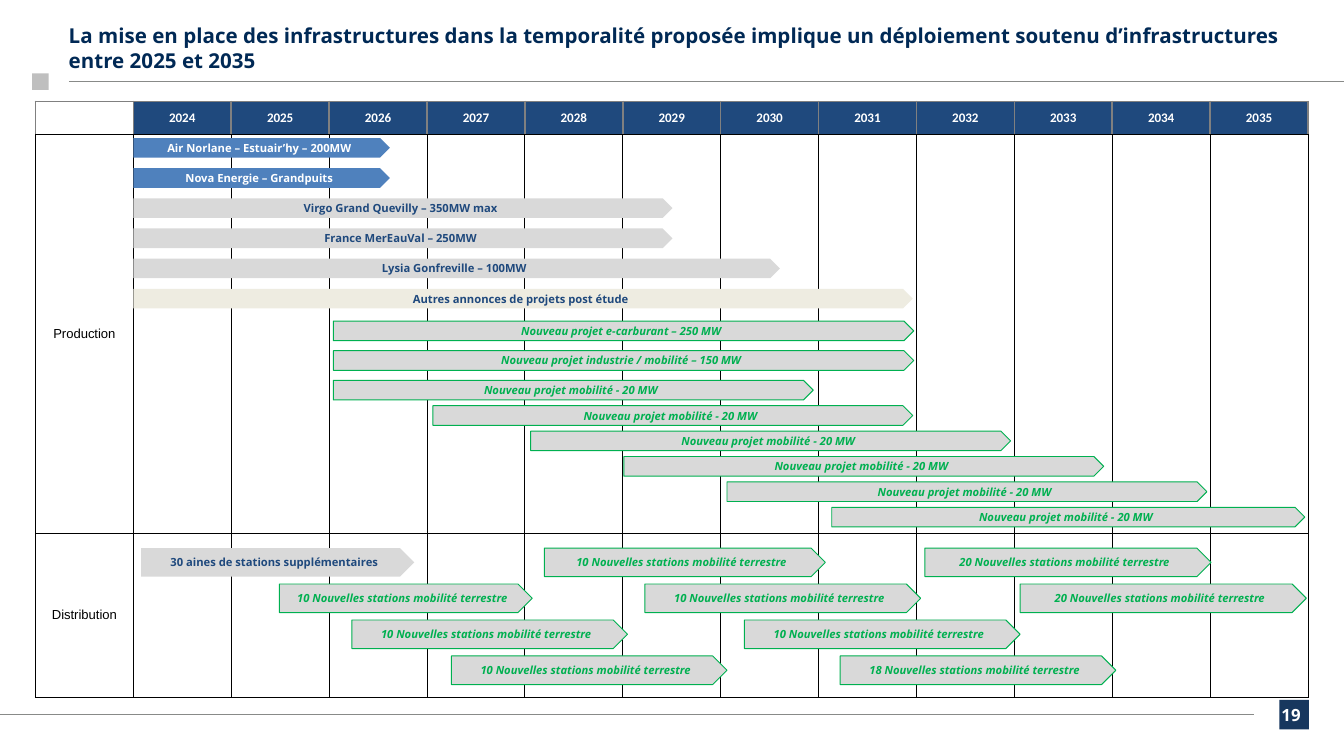
from lxml import etree
from pptx import Presentation
from pptx.dml.color import RGBColor
from pptx.enum.shapes import MSO_CONNECTOR, MSO_SHAPE
from pptx.enum.text import MSO_ANCHOR, PP_ALIGN
from pptx.oxml import parse_xml
from pptx.oxml.ns import nsdecls, qn
from pptx.util import Cm, Pt

STRAIGHT = MSO_CONNECTOR.STRAIGHT
RECT, PENTAGON = MSO_SHAPE.RECTANGLE, MSO_SHAPE.PENTAGON
MIDDLE = MSO_ANCHOR.MIDDLE
LEFT, CENTER = PP_ALIGN.LEFT, PP_ALIGN.CENTER

BLACK = RGBColor(0x00, 0x00, 0x00)
WHITE = RGBColor(0xFF, 0xFF, 0xFF)
NAVY = RGBColor(0x00, 0x29, 0x55)
PAGE_BLUE = RGBColor(0x17, 0x37, 0x5E)
HEADER_BLUE = RGBColor(0x1F, 0x49, 0x7D)
BAR_BLUE = RGBColor(0x4F, 0x81, 0xBD)
BAR_GREY = RGBColor(0xD9, 0xD9, 0xD9)
BAR_BEIGE = RGBColor(0xEE, 0xEC, 0xE1)
GREEN = RGBColor(0x00, 0xB0, 0x50)
MARK_GREY = RGBColor(0xBF, 0xBF, 0xBF)
RULE_GREY = RGBColor(0x88, 0x8A, 0x88)
BORDER_GREY = RGBColor(0x80, 0x80, 0x80)


def write(tf, text, size=6, font="Open Sans", color=BLACK, bold=True,
          italic=False, align=CENTER, margin_y=0):
    tf.word_wrap = True
    tf.vertical_anchor = MIDDLE
    tf.margin_left = tf.margin_right = 0
    tf.margin_top = tf.margin_bottom = Cm(margin_y)
    p = tf.paragraphs[0]
    p.alignment = align
    r = p.add_run()
    r.text = text
    r.font.name, r.font.size = font, Pt(size)
    r.font.bold, r.font.italic = bold, italic
    r.font.color.rgb = color


def add_block(kind, x, y, w, h, fill, line=None):
    s = slide.shapes.add_shape(kind, Cm(x), Cm(y), Cm(w), Cm(h))
    s.shadow.inherit = False
    s.fill.solid()
    s.fill.fore_color.rgb = fill
    if line is None:
        s.line.fill.background()
    else:
        s.line.color.rgb = line
        s.line.width = Pt(0.5)
    return s


prs = Presentation()
prs.slide_width, prs.slide_height = Cm(25.4), Cm(14.29)
slide = prs.slides.add_slide(prs.slide_layouts[6])

# Frame: rules, markers, title and page number
for x1, x2, y in [(0, 23.7, 13.5), (1.3, 25.4, 1.54)]:
    line = slide.shapes.add_connector(STRAIGHT, Cm(x1), Cm(y), Cm(x2), Cm(y))
    line.line.color.rgb = RULE_GREY
    line.line.width = Pt(0.75)
    etree.SubElement(line._element.spPr, qn("a:effectLst"))

add_block(RECT, 24.18, 13.23, 0.56, 0.56, PAGE_BLUE)
add_block(RECT, 0.61, 1.39, 0.31, 0.31, MARK_GREY)

page = slide.shapes.add_textbox(Cm(23.79), Cm(13.13), Cm(1.22), Cm(0.76))
write(page.text_frame, "19", size=9, color=WHITE, margin_y=0.13)

title = slide.shapes.add_textbox(Cm(1.3), Cm(0.46), Cm(23.09), Cm(0.89))
write(title.text_frame,
      "La mise en place des infrastructures dans la temporalité proposée "
      "implique un déploiement soutenu d’infrastructures entre 2025 et 2035",
      size=11, color=NAVY, align=LEFT, margin_y=0.13)

# Calendar grid: one label column, then one column a year
GRID_X, GRID_Y, COL = 0.67, 1.91, 1.85
ROWS = [0.63, 7.54, 3.1]
YEARS = range(2024, 2036)
n_cols = len(YEARS) + 1
table = slide.shapes.add_table(len(ROWS), n_cols, Cm(GRID_X), Cm(GRID_Y),
                               Cm(COL * n_cols), Cm(sum(ROWS))).table
table.first_row = table.horz_banding = False
for col in table.columns:
    col.width = Cm(COL)
for row, height in zip(table.rows, ROWS):
    row.height = Cm(height)

labels = {(0, c): str(year) for c, year in enumerate(YEARS, 1)}
labels.update({(1, 0): "Production", (2, 0): "Distribution"})
for i in range(len(ROWS)):
    for j in range(n_cols):
        cell = table.cell(i, j)
        cell.vertical_anchor = MIDDLE
        cell.margin_left = cell.margin_right = 0
        cell.margin_top = cell.margin_bottom = Cm(0.1)
        cell.text_frame.paragraphs[0].font.size = Pt(7)
        if (i, j) in labels:
            write(cell.text_frame, labels[i, j], size=7, margin_y=0.1,
                  font="Arial" if i else "Calibri",
                  color=BLACK if i else WHITE, bold=i == 0)
        if i == 0:
            cell.fill.solid()
            cell.fill.fore_color.rgb = HEADER_BLUE if j else WHITE
        else:
            cell.fill.background()
        side = (BORDER_GREY, 1) if i == 0 else (BLACK, 0.5)
        top = (BORDER_GREY if i == 0 else BLACK, 0.5)
        borders = {"lnL": side, "lnR": side, "lnT": top, "lnB": (BLACK, 0.5)}
        for k, (tag, (color, width)) in enumerate(borders.items()):
            cell._tc.get_or_add_tcPr().insert(k, parse_xml(
                f'<a:{tag} {nsdecls("a")} w="{Pt(width)}"><a:solidFill>'
                f'<a:srgbClr val="{color}"/></a:solidFill></a:{tag}>'))

# Bars: fill, outline, text colour of each status
BUILT = (BAR_BLUE, None, WHITE)
ANNOUNCED = (BAR_GREY, None, HEADER_BLUE)
OTHER = (BAR_BEIGE, None, HEADER_BLUE)
NEW = (BAR_GREY, GREEN, GREEN)

START = GRID_X + COL
PLANT_H, STATION_H = 0.37, 0.54
bars = []  # x, y, width, height, text, status

announced = [
    (4.85, "Air Norlane – Estuair’hy – 200MW", BUILT),
    (4.85, "Nova Energie – Grandpuits", BUILT),
    (10.19, "Virgo Grand Quevilly – 350MW max", ANNOUNCED),
    (10.19, "France MerEauVal – 250MW", ANNOUNCED),
    (12.22, "Lysia Gonfreville – 100MW", ANNOUNCED),
    (14.73, "Autres annonces de projets post étude", OTHER),
]
for i, (w, text, status) in enumerate(announced):
    bars.append((START, 2.61 + 0.57 * i, w, PLANT_H, text, status))

for i, text in enumerate(["Nouveau projet e-carburant – 250 MW",
                          "Nouveau projet industrie / mobilité – 150 MW"]):
    bars.append((6.3, 6.07 + 0.56 * i, 10.97, PLANT_H, text, NEW))

mobility = [(6.3, 9.07), (8.18, 9.07), (10.03, 9.07),
            (11.79, 9.07), (13.74, 9.07), (15.72, 8.94)]
for i, (x, w) in enumerate(mobility):
    bars.append((x, 7.19 + 0.48 * i, w, PLANT_H,
                 "Nouveau projet mobilité - 20 MW", NEW))

STATION_Y, STATION_STEP = 10.36, 0.68
bars.append((2.67, STATION_Y, 5.16, STATION_H,
             "30 aines de stations supplémentaires", ANNOUNCED))
stations = [  # x, row, width, count
    (5.28, 1, 4.78, 10), (6.65, 2, 5.21, 10), (8.53, 3, 5.21, 10),
    (10.29, 0, 5.31, 10), (12.19, 1, 5.21, 10), (14.07, 2, 5.21, 10),
    (15.88, 3, 5.21, 18), (17.48, 0, 5.41, 20), (19.28, 1, 5.41, 20),
]
for x, row, w, count in stations:
    bars.append((x, STATION_Y + STATION_STEP * row, w, STATION_H,
                 f"{count} Nouvelles stations mobilité terrestre", NEW))

for x, y, w, h, text, (fill, outline, color) in bars:
    s = add_block(PENTAGON, x, y, w, h, fill, outline)
    write(s.text_frame, text, color=color, italic=outline is not None)

prs.save("out.pptx")
